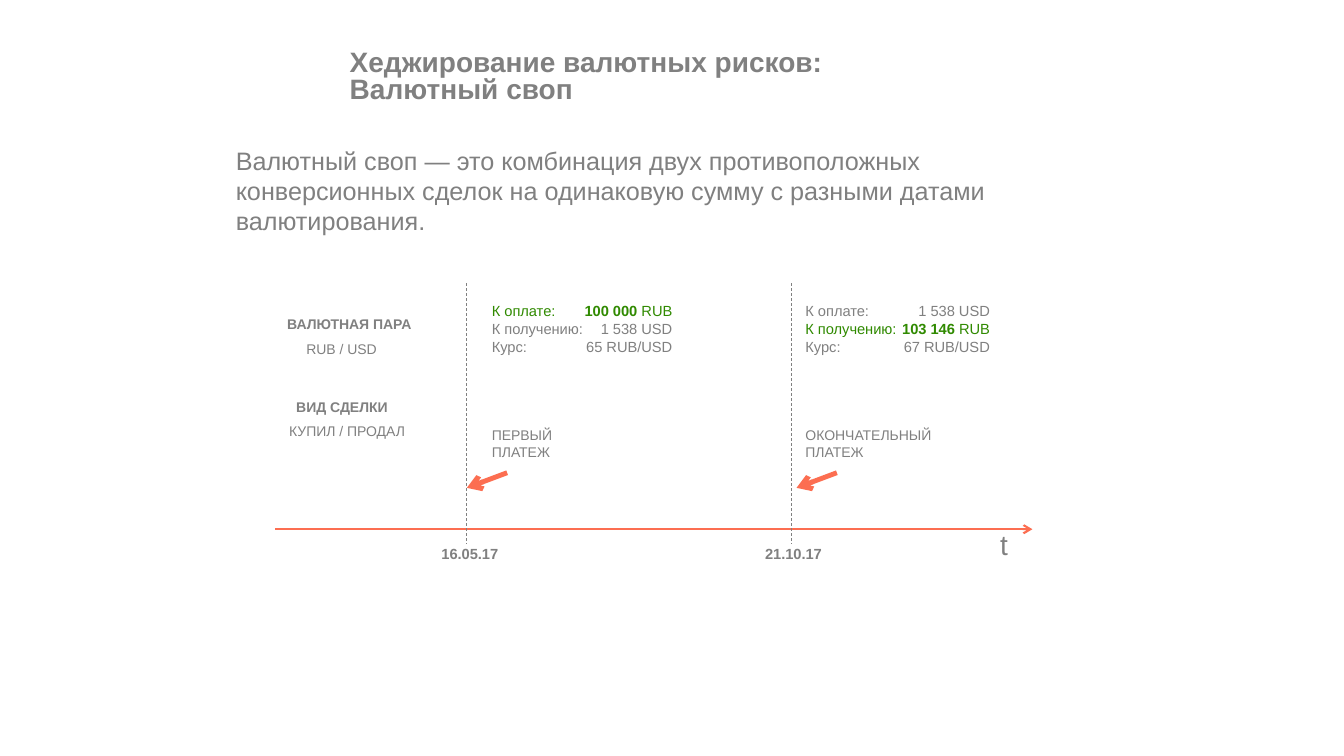
from dataclasses import dataclass

from lxml import etree
from pptx import Presentation
from pptx.dml.color import RGBColor
from pptx.enum import dml, shapes, text
from pptx.oxml import ns
from pptx.util import Inches, Pt


@dataclass(frozen=True)
class Theme:
    font: str = "Arial"
    gray: str = "808080"
    green: str = "308A00"
    coral: str = "FC6E51"
    title: float = 20
    body: float = 18
    deal: float = 10.5
    label: float = 10


THEME = Theme()


def add_run(para, words, size, color=THEME.gray, bold=False):
    run = para.add_run()
    run.text = words
    font = run.font
    font.name, font.size, font.bold = THEME.font, Pt(size), bold
    font.color.rgb = RGBColor.from_string(color)


def add_box(slide, left, top, width, height, wrap=True):
    box = slide.shapes.add_textbox(
        Inches(left), Inches(top), Inches(width), Inches(height))
    box.text_frame.word_wrap = wrap
    return box.text_frame


def add_text(slide, place, words, size, bold=False, wrap=True):
    para = add_box(slide, *place, wrap=wrap).paragraphs[0]
    add_run(para, words, size, bold=bold)


def add_title(slide, lines):
    frame = add_box(slide, 3.37, 0.18, 7.32, 1.18)
    frame.vertical_anchor = text.MSO_ANCHOR.MIDDLE
    para = frame.paragraphs[0]
    para.line_spacing = 0.8
    for i, line in enumerate(lines):
        if i:
            para.add_line_break()
        add_run(para, line, THEME.title, bold=True)


def add_label(slide, place, head, value):
    """Bold heading over a plain value, each a (words, indent) pair."""
    frame = add_box(slide, *place)
    for i, (words, indent) in enumerate((head, value)):
        para = frame.add_paragraph() if i else frame.paragraphs[0]
        para._p.get_or_add_pPr().set("marL", str(Inches(indent)))
        if i:
            para.space_before = Pt(5.7)
        add_run(para, words, THEME.label, bold=i == 0)


def add_deal(slide, left, stop, rows):
    """Rows of name, amount and unit; amounts end at a right tab stop."""
    frame = add_box(slide, left, 2.95, 2.05, 0.63)
    for i, (name, amount, unit, key) in enumerate(rows):
        para = frame.add_paragraph() if i else frame.paragraphs[0]
        tabs = etree.SubElement(para._p.get_or_add_pPr(), ns.qn("a:tabLst"))
        etree.SubElement(tabs, ns.qn("a:tab"),
                         pos=str(Inches(stop)), algn="r")
        color = THEME.green if key else THEME.gray
        add_run(para, name + ":\t", THEME.deal, color)
        add_run(para, amount, THEME.deal, color, bold=key)
        add_run(para, " " + unit, THEME.deal, color)


def add_line(slide, start, end, color, width, dash=False, arrow=False):
    line = slide.shapes.add_connector(
        shapes.MSO_CONNECTOR.STRAIGHT, *map(Inches, start + end))
    line.line.color.rgb = RGBColor.from_string(color)
    line.line.width = Pt(width)
    if dash:
        line.line.dash_style = dml.MSO_LINE.DASH
    if arrow:
        etree.SubElement(line.line._get_or_add_ln(),
                         ns.qn("a:tailEnd"), type="arrow")
    etree.SubElement(line._element.spPr, ns.qn("a:effectLst"))


def main():
    deck = Presentation()
    deck.slide_width, deck.slide_height = Inches(13.33), Inches(7.5)
    slide = deck.slides.add_slide(deck.slide_layouts[6])

    # Title and definition
    add_title(slide, ("Хеджирование валютных рисков:", "Валютный своп"))
    add_text(slide, (2.24, 1.39, 8, 1.01),
             "Валютный своп — это комбинация двух противоположных "
             "конверсионных сделок на одинаковую сумму с разными датами "
             "валютирования.", THEME.body)

    # Time axis
    add_line(slide, (2.73, 5.25), (10.24, 5.25), THEME.coral, 1.5, arrow=True)
    add_text(slide, (9.82, 5.18, 0.28, 0.44), "t", THEME.title, wrap=False)

    # Terms of the deal
    add_label(slide, (2.75, 3.08, 1.54, 0.52),
              ("ВАЛЮТНАЯ ПАРА", 0), ("RUB / USD", 0.19))
    add_label(slide, (2.73, 3.9, 1.57, 0.52),
              ("ВИД СДЕЛКИ", 0.11), ("КУПИЛ / ПРОДАЛ", 0.04))

    # Payments: date mark, note, pointer and amounts
    first = (("К оплате", "100 000", "RUB", True),
             ("К получению", "1 538", "USD", False),
             ("Курс", "65", "RUB/USD", False))
    final = (("К оплате", "1 538", "USD", False),
             ("К получению", "103 146", "RUB", True),
             ("Курс", "67", "RUB/USD", False))
    payments = (
        (4.63, 4.78, 4.63, 4.28, 0.87, 1.79, "ПЕРВЫЙ ПЛАТЕЖ", "16.05.17",
         first),
        (7.85, 7.89, 7.9, 7.49, 1.49, 1.83, "ОКОНЧАТЕЛЬНЫЙ ПЛАТЕЖ",
         "21.10.17", final))
    for mark, left, tip, day, width, stop, note, date, rows in payments:
        add_line(slide, (mark, 2.81), (mark, 5.4), THEME.gray, 0.5, dash=True)
        add_text(slide, (left, 4.18, width, 0.44), note, THEME.label)
        add_line(slide, (tip + 0.4, 4.69), (tip, 4.84), THEME.coral, 3.5,
                 arrow=True)
        add_deal(slide, left, stop, rows)
        add_text(slide, (day, 5.36, 0.83, 0.28), date, THEME.deal, bold=True)

    deck.save("out.pptx")


if __name__ == "__main__":
    main()
